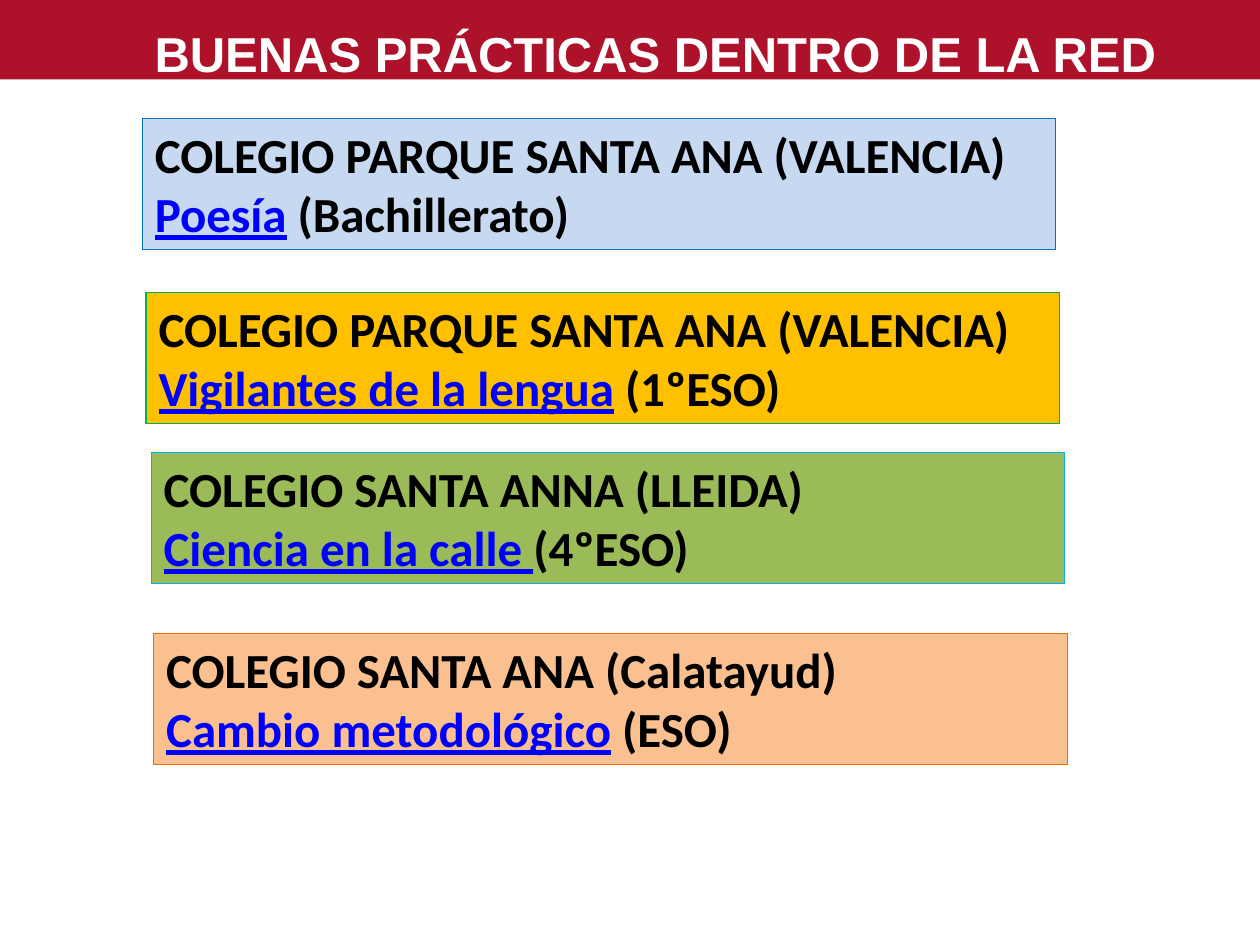
import pptx
import pptx.util
import pptx.dml.color
import pptx.enum.shapes
import pptx.enum.text

Inches = pptx.util.Inches
Pt = pptx.util.Pt
RGBColor = pptx.dml.color.RGBColor
RECTANGLE = pptx.enum.shapes.MSO_SHAPE.RECTANGLE

RED = RGBColor(0xAD, 0x12, 0x2A)
WHITE = RGBColor(0xFF, 0xFF, 0xFF)
BLACK = RGBColor(0x00, 0x00, 0x00)
LINK_BLUE = RGBColor(0x00, 0x00, 0xFF)
PALE_BLUE = RGBColor(0xC6, 0xD9, 0xF1)
BLUE = RGBColor(0x00, 0x70, 0xC0)
AMBER = RGBColor(0xFF, 0xC0, 0x00)
GREEN = RGBColor(0x00, 0xB0, 0x50)
OLIVE = RGBColor(0x9B, 0xBB, 0x59)
SKY = RGBColor(0x00, 0xB0, 0xF0)
PEACH = RGBColor(0xFA, 0xC0, 0x90)
ORANGE = RGBColor(0xE4, 0x6C, 0x0A)

CARD_WIDTH, CARD_HEIGHT = 7.25, 1.04

# left, top, fill, border, paragraphs of (text before, underlined title, text after)
SCHOOLS = [
    (1.13, 0.94, PALE_BLUE, BLUE,
     [("COLEGIO PARQUE SANTA ANA (VALENCIA) ", "Poesía", " (Bachillerato)")]),
    (1.16, 2.32, AMBER, GREEN,
     [("COLEGIO PARQUE SANTA ANA (VALENCIA) ", "Vigilantes de la lengua", " (1ºESO)")]),
    (1.2, 3.59, OLIVE, SKY,
     [("COLEGIO SANTA ANNA (LLEIDA)", "", ""), ("", "Ciencia en la calle ", "(4ºESO)")]),
    (1.22, 5.03, PEACH, ORANGE,
     [("COLEGIO SANTA ANA (Calatayud)", "", ""), ("", "Cambio metodológico", " (ESO)")]),
]


def add_rectangle(slide, left, top, width, height, fill, border=None):
    rectangle = slide.shapes.add_shape(
        RECTANGLE, Inches(left), Inches(top), Inches(width), Inches(height))
    rectangle.shadow.inherit = False
    rectangle.fill.solid()
    rectangle.fill.fore_color.rgb = fill
    if border is None:
        rectangle.line.fill.background()
    else:
        rectangle.line.color.rgb = border
        rectangle.line.width = Pt(0.75)
    return rectangle


def set_font(paragraph, name):
    paragraph.font.name = name
    paragraph.font.size = Pt(28)
    paragraph.font.bold = True


def add_heading(slide, text):
    heading = slide.shapes.add_textbox(Inches(0.2), 0, Inches(10), Inches(0.65))
    heading.text_frame.word_wrap = True
    paragraph = heading.text_frame.paragraphs[0]
    paragraph.text = text
    paragraph.alignment = pptx.enum.text.PP_ALIGN.CENTER
    paragraph.line_spacing = 1.3
    set_font(paragraph, "Arial")
    paragraph.font.color.rgb = WHITE


def add_school_card(slide, left, top, fill, border, paragraphs):
    card = add_rectangle(slide, left, top, CARD_WIDTH, CARD_HEIGHT, fill, border)
    frame = card.text_frame
    frame.word_wrap = True
    frame.vertical_anchor = pptx.enum.text.MSO_ANCHOR.TOP
    for index, (before, title, after) in enumerate(paragraphs):
        paragraph = frame.add_paragraph() if index else frame.paragraphs[0]
        paragraph.alignment = pptx.enum.text.PP_ALIGN.LEFT
        set_font(paragraph, "Calibri")
        for text, is_title in ((before, False), (title, True), (after, False)):
            if text:
                run = paragraph.add_run()
                run.text = text
                run.font.underline = is_title
                run.font.color.rgb = LINK_BLUE if is_title else BLACK


def main():
    presentation = pptx.Presentation()
    presentation.slide_width = Inches(10)
    presentation.slide_height = Inches(7.5)
    slide = presentation.slides.add_slide(presentation.slide_layouts[6])

    # Heading band
    add_rectangle(slide, 0, 0, 10, 0.63, RED)
    add_heading(slide, "BUENAS PRÁCTICAS DENTRO DE LA RED")

    # One card per school
    for school in SCHOOLS:
        add_school_card(slide, *school)

    presentation.save("out.pptx")


if __name__ == "__main__":
    main()
